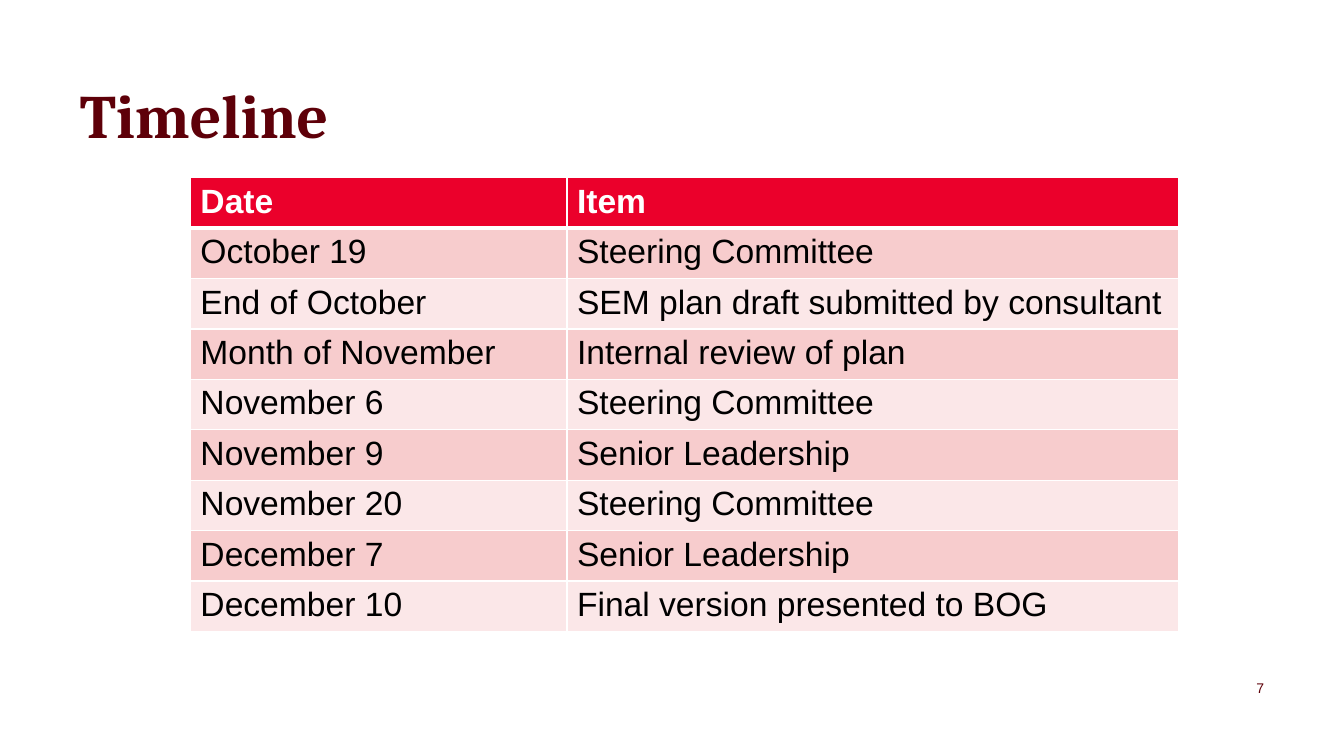
"""Build the Timeline slide with its table of dates and items."""
from lxml.etree import SubElement
from pptx import Presentation
from pptx.dml.color import RGBColor
from pptx.enum.text import MSO_ANCHOR, MSO_AUTO_SIZE, PP_ALIGN
from pptx.oxml.ns import qn
from pptx.util import Pt

MAROON = RGBColor(0x5E, 0x00, 0x09)
RED = RGBColor(0xEB, 0x00, 0x2B)
PINK = RGBColor(0xF7, 0xCC, 0xCD)
PALE_PINK = RGBColor(0xFB, 0xE7, 0xE8)
WHITE = RGBColor(0xFF, 0xFF, 0xFF)
BLACK = RGBColor(0x00, 0x00, 0x00)

ROWS = [
    ("Date", "Item"),
    ("October 19", "Steering Committee"),
    ("End of October", "SEM plan draft submitted by consultant"),
    ("Month of November", "Internal review of plan"),
    ("November 6", "Steering Committee"),
    ("November 9", "Senior Leadership"),
    ("November 20", "Steering Committee"),
    ("December 7", "Senior Leadership"),
    ("December 10", "Final version presented to BOG"),
]
COLUMN_WIDTHS = [Pt(269), Pt(437)]
ROW_HEIGHT = Pt(36)


def write_text(frame, text, *, size, color, font="Arial", bold=False,
               align=PP_ALIGN.LEFT, anchor=MSO_ANCHOR.TOP, margin=None):
    frame.word_wrap = True
    frame.vertical_anchor = anchor
    if margin is not None:
        frame.auto_size = MSO_AUTO_SIZE.NONE
        frame.margin_left = frame.margin_right = margin
        frame.margin_top = frame.margin_bottom = margin
    paragraph = frame.paragraphs[0]
    paragraph.alignment = align
    run = paragraph.add_run()
    run.text = text
    run.font.name = font
    run.font.size = Pt(size)
    run.font.bold = bold
    run.font.color.rgb = color


def add_border(cell, side, width):
    properties = cell._tc.get_or_add_tcPr()
    line = SubElement(properties, qn(f"a:ln{side}"), w=str(Pt(width)))
    fill = SubElement(line, qn("a:solidFill"))
    SubElement(fill, qn("a:srgbClr"), val=str(WHITE))


presentation = Presentation()
presentation.slide_width = Pt(960)
presentation.slide_height = Pt(540)
slide = presentation.slides.add_slide(presentation.slide_layouts[5])

page_number = slide.shapes.add_textbox(Pt(849), Pt(477.5), Pt(54), Pt(27))
write_text(page_number.text_frame, "7", size=10, color=MAROON,
           align=PP_ALIGN.RIGHT, anchor=MSO_ANCHOR.MIDDLE, margin=0)

table = slide.shapes.add_table(len(ROWS), len(COLUMN_WIDTHS), Pt(136), Pt(127),
                               sum(COLUMN_WIDTHS), ROW_HEIGHT * len(ROWS)).table
for column, width in zip(table.columns, COLUMN_WIDTHS):
    column.width = width

for row_index, row in enumerate(ROWS):
    is_header = row_index == 0
    table.rows[row_index].height = ROW_HEIGHT
    for column_index, text in enumerate(row):
        cell = table.cell(row_index, column_index)
        write_text(cell.text_frame, text, size=24, bold=is_header,
                   color=WHITE if is_header else BLACK)
        for side in "LRTB":
            under_header = (row_index, side) in [(0, "B"), (1, "T")]
            add_border(cell, side, 3 if under_header else 1)
        cell.fill.solid()
        band = PINK if row_index % 2 else PALE_PINK
        cell.fill.fore_color.rgb = RED if is_header else band

title = slide.shapes.title
title.left, title.top, title.width, title.height = Pt(57), Pt(54), Pt(846), Pt(54)
write_text(title.text_frame, "Timeline", size=44, color=MAROON, font="Cambria",
           bold=True, anchor=MSO_ANCHOR.BOTTOM, margin=0)

presentation.save("out.pptx")
